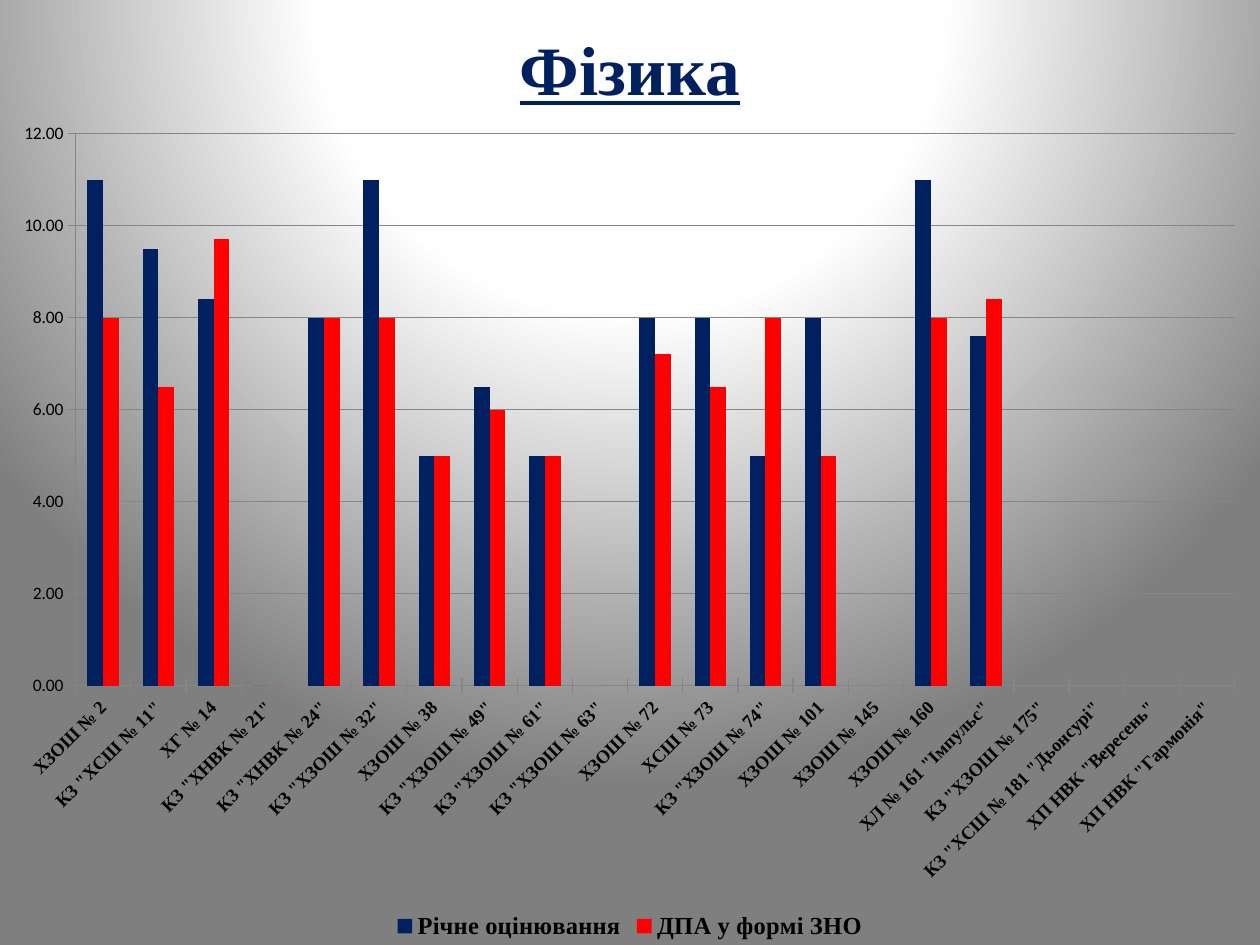
from dataclasses import dataclass

from lxml import etree
from pptx import Presentation
from pptx import util as u
from pptx.chart import data as chart_data
from pptx.dml import color
from pptx.enum import chart as chart_enum, text
from pptx.oxml import parse_xml
from pptx.oxml.ns import nsdecls, qn

Pt = u.Pt


@dataclass(frozen=True)
class Theme:
    navy: str = "002060"
    red: str = "FF0000"
    black: str = "000000"
    axis_gray: str = "868686"
    background: tuple = ((0, "FFFFFF"), (40, "FEFEFE"), (100, "7F7F7F"))
    serif: str = "Times New Roman"
    sans: str = "Calibri"
    title_size: float = 39.6
    value_size: float = 10
    category_size: float = 10.5
    legend_size: float = 14


THEME = Theme()

# Average marks per school: yearly mark, exam mark
SCHOOL_MARKS = [
    ("ХЗОШ № 2", 11, 8),
    ('КЗ "ХСШ № 11"', 9.5, 6.5),
    ("ХГ № 14", 8.4, 9.7),
    ('КЗ "ХНВК № 21"', 0, 0),
    ('КЗ "ХНВК № 24"', 8, 8),
    ('КЗ "ХЗОШ № 32"', 11, 8),
    ("ХЗОШ № 38", 5, 5),
    ('КЗ "ХЗОШ № 49"', 6.5, 6),
    ('КЗ "ХЗОШ № 61"', 5, 5),
    ('КЗ "ХЗОШ № 63"', None, None),
    ("ХЗОШ № 72", 8, 7.2),
    ("ХСШ № 73", 8, 6.5),
    ('КЗ "ХЗОШ № 74"', 5, 8),
    ("ХЗОШ № 101", 8, 5),
    ("ХЗОШ № 145", None, None),
    ("ХЗОШ № 160", 11, 8),
    ('ХЛ № 161 "Імпульс"', 7.6, 8.4),
    ('КЗ "ХЗОШ № 175"', None, None),
    ('КЗ "ХСШ № 181 "Дьонсурі"', None, None),
    ('ХП НВК "Вересень"', None, None),
    ('ХП НВК "Гармонія"', None, None),
]
SERIES = [("Річне оцінювання", THEME.navy), ("ДПА у формі ЗНО", THEME.red)]


def set_font(font, name, size, rgb, bold=False):
    font.name, font.size, font.bold = name, Pt(size), bold
    font.color.rgb = color.RGBColor.from_string(rgb)


def paint_background(slide):
    """Fill the slide with a circular gradient centred above its top edge."""
    slide.background.fill.gradient()
    gradient = slide.element.find(".//" + qn("a:gradFill"))
    stops = "".join(
        f'<a:gs pos="{position * 1000}"><a:srgbClr val="{rgb}"/></a:gs>'
        for position, rgb in THEME.background
    )
    gradient.getparent().replace(gradient, parse_xml(
        f'<a:gradFill {nsdecls("a")} rotWithShape="1"><a:gsLst>{stops}</a:gsLst>'
        '<a:path path="circle"><a:fillToRect l="50000" t="-80000" r="50000" '
        'b="180000"/></a:path></a:gradFill>'
    ))


def place_title(slide, box, wording):
    title = slide.shapes.title
    title.left, title.top, title.width, title.height = map(Pt, box)
    frame = title.text_frame
    frame.auto_size = text.MSO_AUTO_SIZE.NONE
    frame.vertical_anchor = text.MSO_ANCHOR.MIDDLE
    paragraph = frame.paragraphs[0]
    paragraph.alignment = text.PP_ALIGN.CENTER
    run = paragraph.add_run()
    run.text = wording
    set_font(run.font, THEME.serif, THEME.title_size, THEME.navy, bold=True)
    run.font.underline = True


def set_plot_layout(chart, **fractions):
    """Fix the inner plot area as fractions of the chart."""
    plot_area = chart.plots[0]._element.getparent()
    for old_layout in plot_area.findall(qn("c:layout")):
        plot_area.remove(old_layout)
    layout = etree.Element(qn("c:layout"))
    manual = etree.SubElement(layout, qn("c:manualLayout"))
    settings = {"layoutTarget": "inner", "xMode": "edge", "yMode": "edge", **fractions}
    for tag, value in settings.items():
        etree.SubElement(manual, qn(f"c:{tag}")).set("val", str(value))
    plot_area.insert(0, layout)


def style_axes(chart):
    gray = color.RGBColor.from_string(THEME.axis_gray)
    category_axis, value_axis = chart.category_axis, chart.value_axis
    for axis in (category_axis, value_axis):
        axis.major_tick_mark = chart_enum.XL_TICK_MARK.CROSS
        axis.format.line.color.rgb = gray
        axis.format.line.width = Pt(0.75)
    set_font(category_axis.tick_labels.font, THEME.serif, THEME.category_size,
             THEME.black, bold=True)
    # Slant the school names by 45 degrees
    body = category_axis._element.find(qn("c:txPr")).find(qn("a:bodyPr"))
    body.set("rot", "-2700000")
    body.set("vert", "horz")

    value_axis.minimum_scale, value_axis.maximum_scale = 0, 12
    value_axis.major_unit = 2
    value_axis.has_major_gridlines = True
    value_axis.major_gridlines.format.line.color.rgb = gray
    value_axis.major_gridlines.format.line.width = Pt(0.75)
    value_axis.tick_labels.number_format = "0.00"
    value_axis.tick_labels.number_format_is_linked = False
    set_font(value_axis.tick_labels.font, THEME.sans, THEME.value_size, THEME.black)


def place_marks_chart(slide, box):
    marks = chart_data.CategoryChartData(number_format="0.00")
    schools, *columns = zip(*SCHOOL_MARKS)
    marks.categories = schools
    for (name, _), values in zip(SERIES, columns):
        marks.add_series(name, values)
    chart = slide.shapes.add_chart(
        chart_enum.XL_CHART_TYPE.COLUMN_CLUSTERED, *map(Pt, box), marks
    ).chart
    chart.has_title = False
    set_font(chart.font, THEME.sans, THEME.value_size, THEME.black)

    # Columns
    plot = chart.plots[0]
    plot.gap_width, plot.overlap, plot.vary_by_categories = 150, 0, False
    for series, (_, rgb) in zip(plot.series, SERIES):
        series.format.fill.solid()
        series.format.fill.fore_color.rgb = color.RGBColor.from_string(rgb)
    set_plot_layout(chart, x=0.06, y=0.03, w=0.92, h=0.66)
    style_axes(chart)

    # Legend
    chart.has_legend = True
    chart.legend.position = chart_enum.XL_LEGEND_POSITION.BOTTOM
    chart.legend.include_in_layout = False
    set_font(chart.legend.font, THEME.serif, THEME.legend_size, THEME.black, bold=True)


def main():
    presentation = Presentation()
    presentation.slide_width, presentation.slide_height = Pt(720), Pt(540)
    title_only = presentation.slide_layouts[5]
    slide = presentation.slides.add_slide(title_only)
    paint_background(slide)
    place_title(slide, (36, 21.6, 648, 34.56), "Фізика")
    place_marks_chart(slide, (0, 62, 720, 478))
    presentation.save("out.pptx")


if __name__ == "__main__":
    main()
